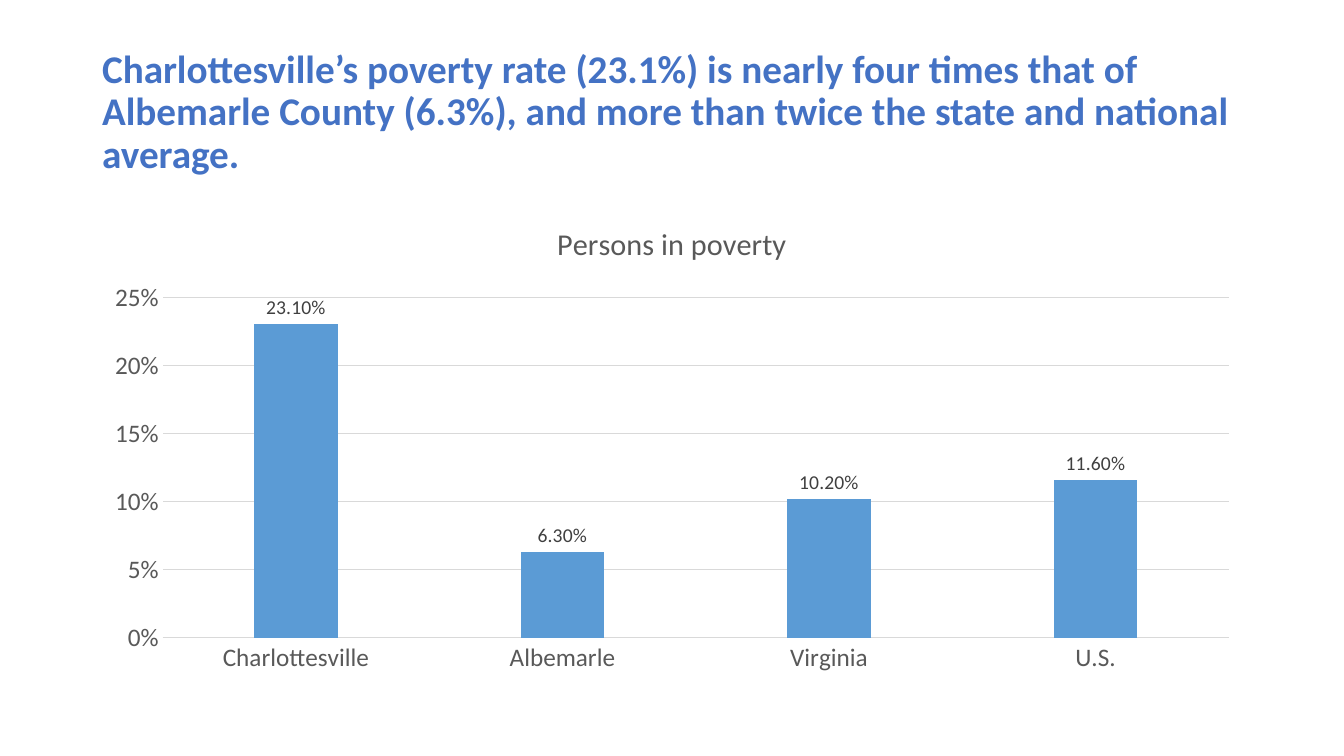
from dataclasses import dataclass

from pptx import Presentation
from pptx.chart.data import CategoryChartData
from pptx.dml.color import RGBColor
from pptx.enum.chart import XL_CHART_TYPE, XL_LABEL_POSITION, XL_TICK_MARK
from pptx.enum.text import MSO_ANCHOR, MSO_AUTO_SIZE, PP_ALIGN
from pptx.util import Pt

COLUMNS = XL_CHART_TYPE.COLUMN_CLUSTERED
OUTSIDE_END = XL_LABEL_POSITION.OUTSIDE_END
NO_TICKS = XL_TICK_MARK.NONE
MIDDLE = MSO_ANCHOR.MIDDLE
NO_AUTOFIT = MSO_AUTO_SIZE.NONE
LEFT = PP_ALIGN.LEFT
SLIDE_WIDTH, SLIDE_HEIGHT = 1344, 756
EMU_PER_PX = 12192000 / SLIDE_WIDTH
TITLE_ONLY = 5


@dataclass(frozen=True)
class Theme:
    font: str = "Calibri"
    heading: str = "4472C4"
    bar: str = "5B9BD5"
    chart_text: str = "595959"
    label_text: str = "404040"
    rule: str = "D9D9D9"
    heading_size: float = 28
    chart_title_size: float = 21.6
    axis_size: float = 18
    label_size: float = 14
    rule_width: float = 0.75


THEME = Theme()


def px(length):
    return round(length * EMU_PER_PX)


def style_font(font, size, color, bold=False):
    font.name = THEME.font
    font.size = Pt(size)
    font.bold = bold
    font.color.rgb = RGBColor.from_string(color)


presentation = Presentation()
presentation.slide_width = px(SLIDE_WIDTH)
presentation.slide_height = px(SLIDE_HEIGHT)
slide = presentation.slides.add_slide(presentation.slide_layouts[TITLE_ONLY])

# Headline
title = slide.shapes.title
title.left, title.top, title.width, title.height = px(92), px(40), px(1160), px(146)
title.text_frame.word_wrap = True
title.text_frame.auto_size = NO_AUTOFIT
title.text_frame.vertical_anchor = MIDDLE
paragraph = title.text_frame.paragraphs[0]
paragraph.alignment = LEFT
paragraph.line_spacing = 0.9
run = paragraph.add_run()
run.text = (
    "Charlottesville’s poverty rate (23.1%) is nearly four times that of "
    "Albemarle County (6.3%), and more than twice the state and national average."
)
style_font(run.font, THEME.heading_size, THEME.heading, bold=True)

# Poverty chart
poverty_rates = {
    "Charlottesville": 0.231,
    "Albemarle": 0.063,
    "Virginia": 0.102,
    "U.S.": 0.116,
}
chart_data = CategoryChartData(number_format="0.00%")
chart_data.categories = list(poverty_rates)
chart_data.add_series("Persons in poverty", list(poverty_rates.values()))
chart = slide.shapes.add_chart(
    COLUMNS, px(92), px(202), px(1160), px(480), chart_data
).chart
style_font(chart.font, THEME.axis_size, THEME.chart_text)
chart.has_legend = False
chart.has_title = True
chart_title_run = chart.chart_title.text_frame.paragraphs[0].add_run()
chart_title_run.text = "Persons in poverty"
style_font(chart_title_run.font, THEME.chart_title_size, THEME.chart_text)
chart.chart_title.include_in_layout = False

# Axes
category_axis, value_axis = chart.category_axis, chart.value_axis
for axis in (category_axis, value_axis):
    axis.major_tick_mark = NO_TICKS
    axis.minor_tick_mark = NO_TICKS
    style_font(axis.tick_labels.font, THEME.axis_size, THEME.chart_text)
value_axis.minimum_scale = 0
value_axis.maximum_scale = 0.25
value_axis.major_unit = 0.05
value_axis.tick_labels.number_format = "0%"
value_axis.tick_labels.number_format_is_linked = False
value_axis.format.line.fill.background()
for line in (category_axis.format.line, value_axis.major_gridlines.format.line):
    line.width = Pt(THEME.rule_width)
    line.color.rgb = RGBColor.from_string(THEME.rule)

# Bars and their labels
plot = chart.plots[0]
plot.gap_width = 219
plot.overlap = -27
plot.vary_by_categories = False
bars = plot.series[0]
bars.invert_if_negative = False
bars.format.fill.solid()
bars.format.fill.fore_color.rgb = RGBColor.from_string(THEME.bar)
labels = bars.data_labels
labels.show_value = True
labels.position = OUTSIDE_END
labels.number_format = "0.00%"
labels.number_format_is_linked = False
style_font(labels.font, THEME.label_size, THEME.label_text)

presentation.save("out.pptx")
